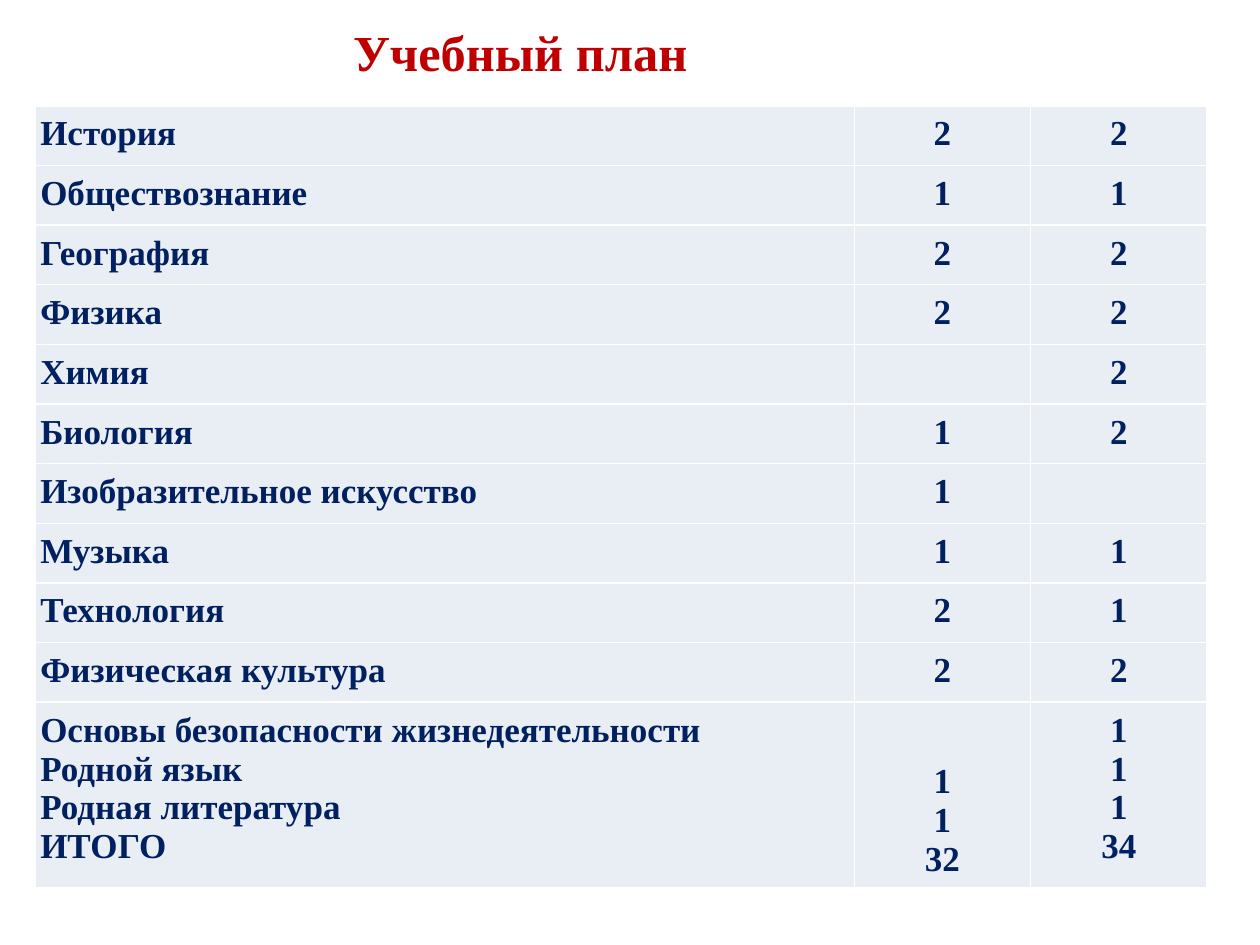
from lxml.etree import SubElement as Sub
from pptx import Presentation
from pptx.dml.color import RGBColor as Rgb
from pptx.enum.text import MSO_ANCHOR as Anchor, PP_ALIGN as Align
from pptx.oxml.ns import qn
from pptx.util import Inches as In, Pt

# Content: subject and weekly hours in two classes
TITLE = "Учебный план"
ROWS = [
    ("История", "2", "2"),
    ("Обществознание", "1", "1"),
    ("География", "2", "2"),
    ("Физика", "2", "2"),
    ("Химия", "", "2"),
    ("Биология", "1", "2"),
    ("Изобразительное искусство", "1", ""),
    ("Музыка", "1", "1"),
    ("Технология", "2", "1"),
    ("Физическая культура", "2", "2"),
    ("Основы безопасности жизнедеятельности\nРодной язык\nРодная литература\nИТОГО",
     "1\n1\n32", "1\n1\n1\n34"),
]

# Format
HUES = {"title": "C00000", "text": "002060", "fill": "E9EDF4", "line": "FFFFFF"}
FONT = "Times New Roman"
COLS = (6.5, 1.4, 1.4)
ROW, LAST = 0.46, 1.37


def write(frame, text, size=20, hue="text", align=Align.LEFT):
    for i, line in enumerate(text.split("\n")):
        para = frame.add_paragraph() if i else frame.paragraphs[0]
        para.alignment = align
        run = para.add_run()
        run.text = line
        font = run.font
        font.name, font.size, font.bold = FONT, Pt(size), True
        font.color.rgb = Rgb.from_string(HUES[hue])


def edge(cell):
    props = cell._tc.get_or_add_tcPr()
    for i, tag in enumerate(("a:lnL", "a:lnR", "a:lnT", "a:lnB")):
        line = props.makeelement(qn(tag), {"w": str(Pt(1))})
        fill = Sub(line, qn("a:solidFill"))
        Sub(fill, qn("a:srgbClr"), val=HUES["line"])
        props.insert(i, line)


deck = Presentation()
deck.slide_width, deck.slide_height = In(10), In(7.5)
slide = deck.slides.add_slide(deck.slide_layouts[6])

# Title
box = slide.shapes.add_textbox(In(0.5), In(0.13), In(7.26), In(0.55)).text_frame
box.word_wrap = True
box.vertical_anchor = Anchor.MIDDLE
write(box, TITLE, size=28.8, hue="title", align=Align.CENTER)

# Table
high = ROW * (len(ROWS) - 1) + LAST
table = slide.shapes.add_table(len(ROWS), len(COLS), In(0.28), In(0.84),
                               In(sum(COLS)), In(high)).table
table.first_row = table.horz_banding = False
for col, wide in zip(table.columns, COLS):
    col.width = In(wide)
for r, row in enumerate(ROWS):
    table.rows[r].height = In(LAST if r == len(ROWS) - 1 else ROW)
    lines = row[0].count("\n")
    for c, text in enumerate(row):
        cell = table.cell(r, c)
        cell.margin_left = cell.margin_right = In(0.04)
        cell.margin_top = cell.margin_bottom = In(0.07)
        cell.fill.solid()
        cell.fill.fore_color.rgb = Rgb.from_string(HUES["fill"])
        edge(cell)
        if text:
            write(cell.text_frame, text, align=Align.CENTER if c else Align.LEFT)
            # Shorter lists line up with the last subjects
            if text.count("\n") < lines:
                cell.vertical_anchor = Anchor.BOTTOM

deck.save("out.pptx")
